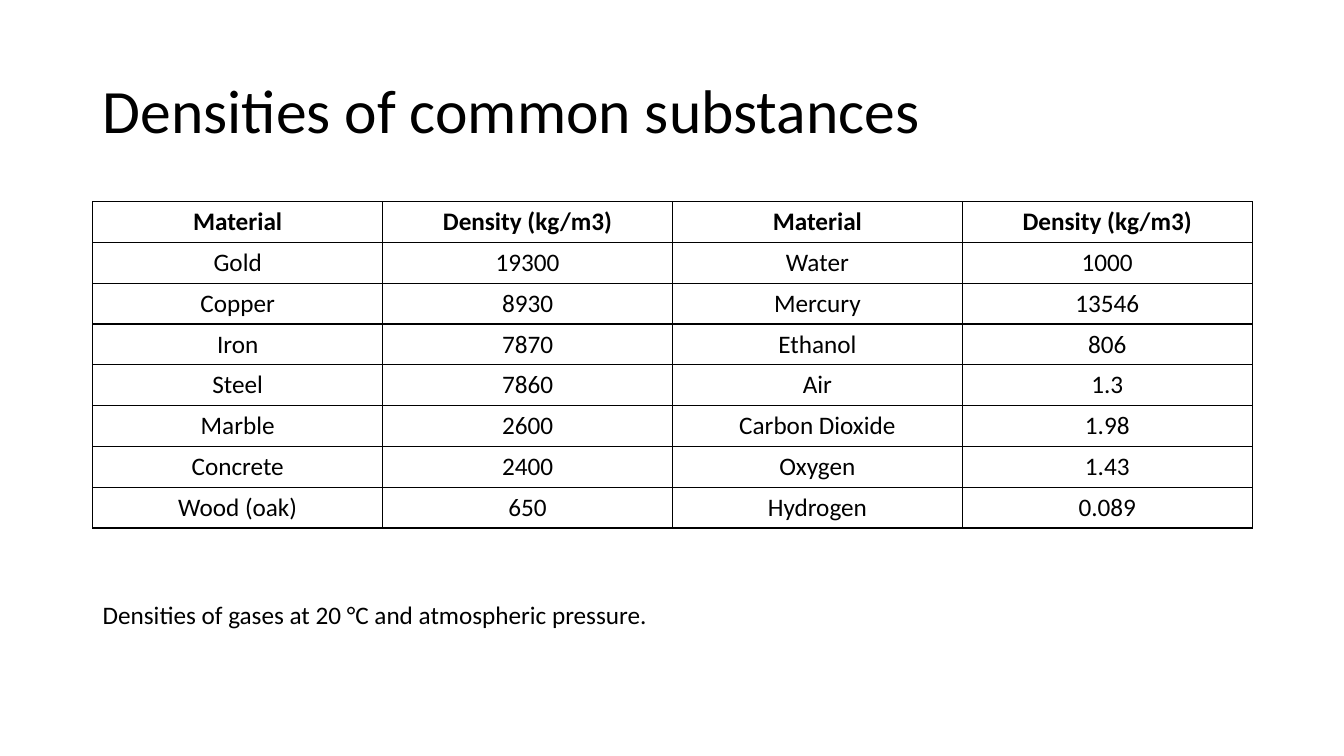
import pptx
import pptx.util
import pptx.dml.color
import pptx.enum.text
import pptx.oxml
import pptx.oxml.ns
from pptx.util import Inches

TITLE = "Densities of common substances"
FOOTNOTE = "Densities of gases at 20 °C and atmospheric pressure."
HEADINGS = ("Material", "Density (kg/m3)")
SOLIDS = [
    ("Gold", "19300"), ("Copper", "8930"), ("Iron", "7870"), ("Steel", "7860"),
    ("Marble", "2600"), ("Concrete", "2400"), ("Wood (oak)", "650"),
]
FLUIDS = [
    ("Water", "1000"), ("Mercury", "13546"), ("Ethanol", "806"), ("Air", "1.3"),
    ("Carbon Dioxide", "1.98"), ("Oxygen", "1.43"), ("Hydrogen", "0.089"),
]

THEME = {
    "font": "Calibri", "ink": "000000", "paper": "FFFFFF",
    "title_size": 44, "body_size": 18, "rule_width": 1,
}
LEFT, WIDTH = 0.92, 11.5
TABLE_TOP, TABLE_HEIGHT = 2, 3.24

ANCHOR = pptx.enum.text.MSO_ANCHOR
ALIGN = pptx.enum.text.PP_ALIGN


def write(frame, text, size, bold=False, align=ALIGN.LEFT):
    frame.text = text
    paragraph = frame.paragraphs[0]
    paragraph.alignment = align
    font = paragraph.runs[0].font
    font.name, font.size, font.bold = THEME["font"], pptx.util.Pt(size), bold
    font.color.rgb = pptx.dml.color.RGBColor.from_string(THEME["ink"])
    return paragraph


def add_text(slide, box, text, size, wrap, anchor):
    frame = slide.shapes.add_textbox(*map(Inches, box)).text_frame
    frame.word_wrap = wrap
    frame.vertical_anchor = anchor
    return write(frame, text, size)


def rule_cell(cell):
    """Draw a solid line on all four sides; lines come before the fill."""
    properties = cell._tc.get_or_add_tcPr()
    width = pptx.util.Pt(THEME["rule_width"])
    for position, side in enumerate(("lnL", "lnR", "lnT", "lnB")):
        line = pptx.oxml.parse_xml(
            f'<a:{side} {pptx.oxml.ns.nsdecls("a")} w="{width}"><a:solidFill>'
            f'<a:srgbClr val="{THEME["ink"]}"/></a:solidFill></a:{side}>')
        properties.insert(position, line)


def add_density_table(slide):
    rows = [HEADINGS * 2] + [solid + fluid for solid, fluid in zip(SOLIDS, FLUIDS)]
    table = slide.shapes.add_table(
        len(rows), len(rows[0]), Inches(LEFT), Inches(TABLE_TOP),
        Inches(WIDTH), Inches(TABLE_HEIGHT)).table
    table.first_row = table.horz_banding = False
    for row_index, row in enumerate(rows):
        for column_index, value in enumerate(row):
            cell = table.cell(row_index, column_index)
            cell.fill.background()
            rule_cell(cell)
            write(cell.text_frame, value, THEME["body_size"],
                  bold=row_index == 0, align=ALIGN.CENTER)


def main():
    deck = pptx.Presentation()
    deck.slide_width, deck.slide_height = Inches(13.33), Inches(7.5)
    slide = deck.slides.add_slide(deck.slide_layouts[6])
    slide.background.fill.solid()
    slide.background.fill.fore_color.rgb = pptx.dml.color.RGBColor.from_string(THEME["paper"])

    # Title
    title = add_text(slide, (LEFT, 0.4, WIDTH, 1.45), TITLE,
                     THEME["title_size"], True, ANCHOR.MIDDLE)
    title.line_spacing = 0.9

    # Densities
    add_density_table(slide)

    # Footnote
    add_text(slide, (LEFT, 5.9, 5.67, 0.4), FOOTNOTE,
             THEME["body_size"], False, ANCHOR.TOP)

    deck.save("out.pptx")


if __name__ == "__main__":
    main()
